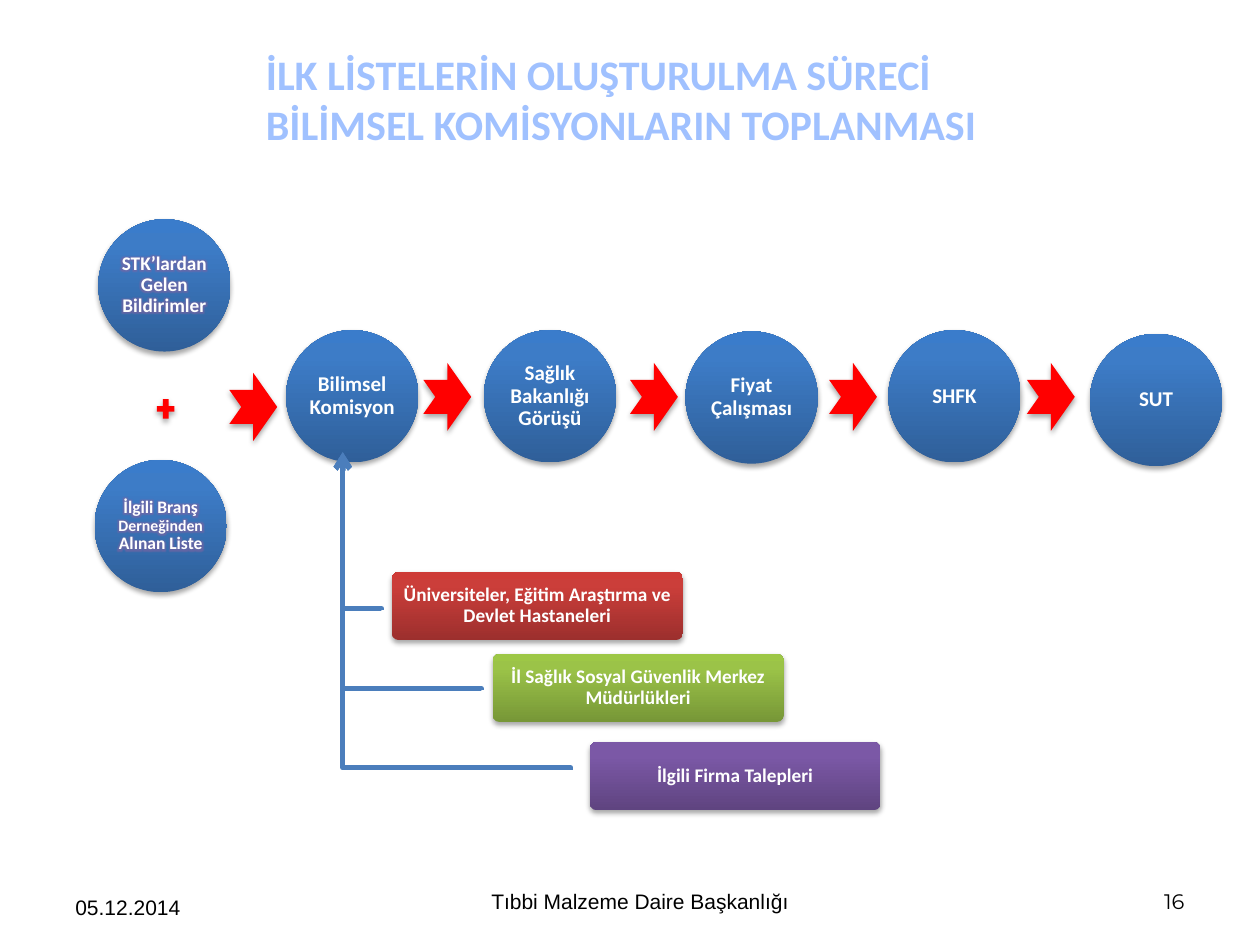
import copy
import pptx
import pptx.util
import pptx.dml.color
import pptx.enum.shapes
import pptx.enum.text
from lxml import etree
from pptx.oxml.ns import qn

Inches, Pt = pptx.util.Inches, pptx.util.Pt
SHAPE = pptx.enum.shapes.MSO_SHAPE
ALIGN = pptx.enum.text.PP_ALIGN
ANCHOR = pptx.enum.text.MSO_ANCHOR

# Content
TITLE = ["İLK LİSTELERİN OLUŞTURULMA SÜRECİ", "BİLİMSEL KOMİSYONLARIN TOPLANMASI"]
BLUE = ("2F5F99", "3D7CC7", "3A7CCB")
RED = ("9C2F2D", "CB3E3A", "CE3B37")
GREEN = ("779737", "9BC348", "9DC746")
PURPLE = ("5F4480", "7B58A6", "7C57A8")
# Sources and steps: left, top, runs of (text, size)
SOURCES = [
    (0.75, 3.65, [("İlgili Branş ", 10), ("Derneğinden ", 9), ("Alınan Liste", 10)]),
    (0.78, 1.74, [("STK’lardan Gelen Bildirimler", 11)]),
]
STEPS = [
    (2.27, 2.62, [("Bilimsel Komisyon", 12)]),
    (3.84, 2.62, [("Sağlık Bakanlığı Görüşü", 12)]),
    (5.44, 2.63, [("Fiyat Çalışması", 12)]),
    (7.05, 2.62, [("SHFK", 12)]),
    (8.65, 2.65, [("SUT", 12)]),
]
ARROWS = [(1.82, 2.96), (3.36, 2.88), (5, 2.88), (6.58, 2.88), (8.15, 2.88)]
# Contributors: left, top, colours, text, connector start x and y
CONTRIBUTORS = [
    (3.11, 4.54, RED, "Üniversiteler, Eğitim Araştırma ve Devlet Hastaneleri", 3.03, 4.84),
    (3.91, 5.19, GREEN, "İl Sağlık Sosyal Güvenlik Merkez Müdürlükleri", 3.82, 5.48),
    (4.68, 5.89, PURPLE, "İlgili Firma Talepleri", 4.53, 6.11),
]
JUNCTION = (2.72, 3.59)
# Footer: box, text, font, alignment, anchor
FOOTER = [
    ((0.5, 7.06, 1.17, 0.29), "05.12.2014", "Arial", ALIGN.LEFT, ANCHOR.BOTTOM),
    ((3.42, 6.98, 3.32, 0.35), "Tıbbi Malzeme Daire Başkanlığı", "Arial", ALIGN.CENTER, ANCHOR.MIDDLE),
    ((8.94, 6.98, 0.56, 0.35), "16", "Montserrat", ALIGN.RIGHT, ANCHOR.MIDDLE),
]


def rgb(value):
    return pptx.dml.color.RGBColor.from_string(value)


def apply(target, values):
    for name, value in values.items():
        setattr(target, name, value)


def add_child(parent, tag, **attributes):
    return etree.SubElement(parent, qn(tag), {k: str(v) for k, v in attributes.items()})


def add_colour(parent, value, alpha):
    colour = add_child(parent, "a:srgbClr", val=value)
    add_child(colour, "a:alpha", val=alpha * 1000)


def style_font(run, size, colour, name="Calibri", bold=True):
    apply(run.font, {"size": Pt(size), "name": name, "bold": bold})
    run.font.color.rgb = rgb(colour)


def add_shadowed(kind, box, fill):
    """Preset shape with a soft shadow; fill is one colour or three stops."""
    shape = slide.shapes.add_shape(kind, *map(Inches, box))
    shape.line.fill.background()
    if isinstance(fill, str):
        shape.fill.solid()
        shape.fill.fore_color.rgb = rgb(fill)
    else:
        shape.fill.gradient()
        shape.fill.gradient_angle = 90
        stop_list = shape._element.spPr.find(".//" + qn("a:gsLst"))
        stop_list.append(copy.deepcopy(stop_list[-1]))
        for stop, position, colour in zip(shape.fill.gradient_stops, (0, 0.8, 1), fill):
            stop.position = position
            stop.color.rgb = rgb(colour)
    shape.shadow.inherit = False
    effects = shape._element.spPr.find(qn("a:effectLst"))
    shadow = add_child(effects, "a:outerShdw", blurRad=Pt(3.1), dist=Pt(1.8),
                       dir=5400000, rotWithShape=0)
    add_colour(shadow, "000000", 35)
    return shape


def add_label(shape, runs, glow=False):
    frame = shape.text_frame
    margins = dict.fromkeys(("margin_left", "margin_right", "margin_top", "margin_bottom"),
                            Inches(0.02))
    apply(frame, {"word_wrap": True, "vertical_anchor": ANCHOR.MIDDLE, **margins})
    paragraph = frame.paragraphs[0]
    apply(paragraph, {"alignment": ALIGN.CENTER, "line_spacing": 0.9})
    for text, size in runs:
        run = paragraph.add_run()
        run.text = text
        style_font(run, size, "FFFFFF")
        if glow:
            effects = etree.Element(qn("a:effectLst"))
            add_colour(add_child(effects, "a:glow", rad=Pt(5)), "8064A2", 60)
            run.font._element.find(qn("a:solidFill")).addnext(effects)


def add_branch(start_x, start_y):
    """Elbow that runs left from a contributor, then up to the junction."""
    end_x, end_y = JUNCTION
    across, up = start_x - end_x, start_y - end_y
    left, top = (start_x + end_x - up) / 2, (start_y + end_y - across) / 2
    branch = slide.shapes.add_connector(
        pptx.enum.shapes.MSO_CONNECTOR.ELBOW, Inches(left), Inches(top + across),
        Inches(left + up), Inches(top))
    branch.line.color.rgb = rgb("4B7EBC")
    branch.line.width = Pt(3)
    properties = branch._element.spPr
    properties.find(qn("a:xfrm")).set("rot", "16200000")
    guides = properties.find(qn("a:prstGeom")).get_or_add_avLst()
    add_child(guides, "a:gd", name="adj1", fmla="val 700")
    add_child(properties.find(qn("a:ln")), "a:tailEnd", type="arrow")
    add_child(properties, "a:effectLst")


deck = pptx.Presentation()
deck.slide_width, deck.slide_height = Inches(10), Inches(7.5)
slide = deck.slides.add_slide(deck.slide_layouts[5])

# Title
title = slide.shapes.title
apply(title, dict(zip(("left", "top", "width", "height"), map(Inches, (2.01, 0.29, 7.57, 0.99)))))
apply(title.text_frame, {"text": "\n".join(TITLE), "vertical_anchor": ANCHOR.MIDDLE,
                         "auto_size": pptx.enum.text.MSO_AUTO_SIZE.NONE})
for line in title.text_frame.paragraphs:
    line.alignment = ALIGN.JUSTIFY
    style_font(line.runs[0], 24, "A0C1FF")

# Process circles, plus sign and arrows
for group, glow in ((SOURCES, True), (STEPS, False)):
    for left, top, runs in group:
        add_label(add_shadowed(SHAPE.OVAL, (left, top, 1.05, 1.05), BLUE), runs, glow)
add_shadowed(SHAPE.MATH_PLUS, (1.22, 3.14, 0.19, 0.21), "FF0000")
for left, top in ARROWS:
    add_shadowed(SHAPE.NOTCHED_RIGHT_ARROW, (left, top, 0.38, 0.54), "FF0000")

# Contributors and their branches
for left, top, colours, text, start_x, start_y in CONTRIBUTORS:
    contributor = add_shadowed(SHAPE.ROUNDED_RECTANGLE, (left, top, 2.31, 0.54), colours)
    contributor.adjustments[0] = 0.1
    add_label(contributor, [(text, 11)])
    add_branch(start_x, start_y)

# Footer
for box, text, font, alignment, anchor in FOOTER:
    note = slide.shapes.add_textbox(*map(Inches, box)).text_frame
    apply(note, {"text": text, "word_wrap": True, "vertical_anchor": anchor})
    note.paragraphs[0].alignment = alignment
    style_font(note.paragraphs[0].runs[0], 12, "000000", font, False)

deck.save("out.pptx")
